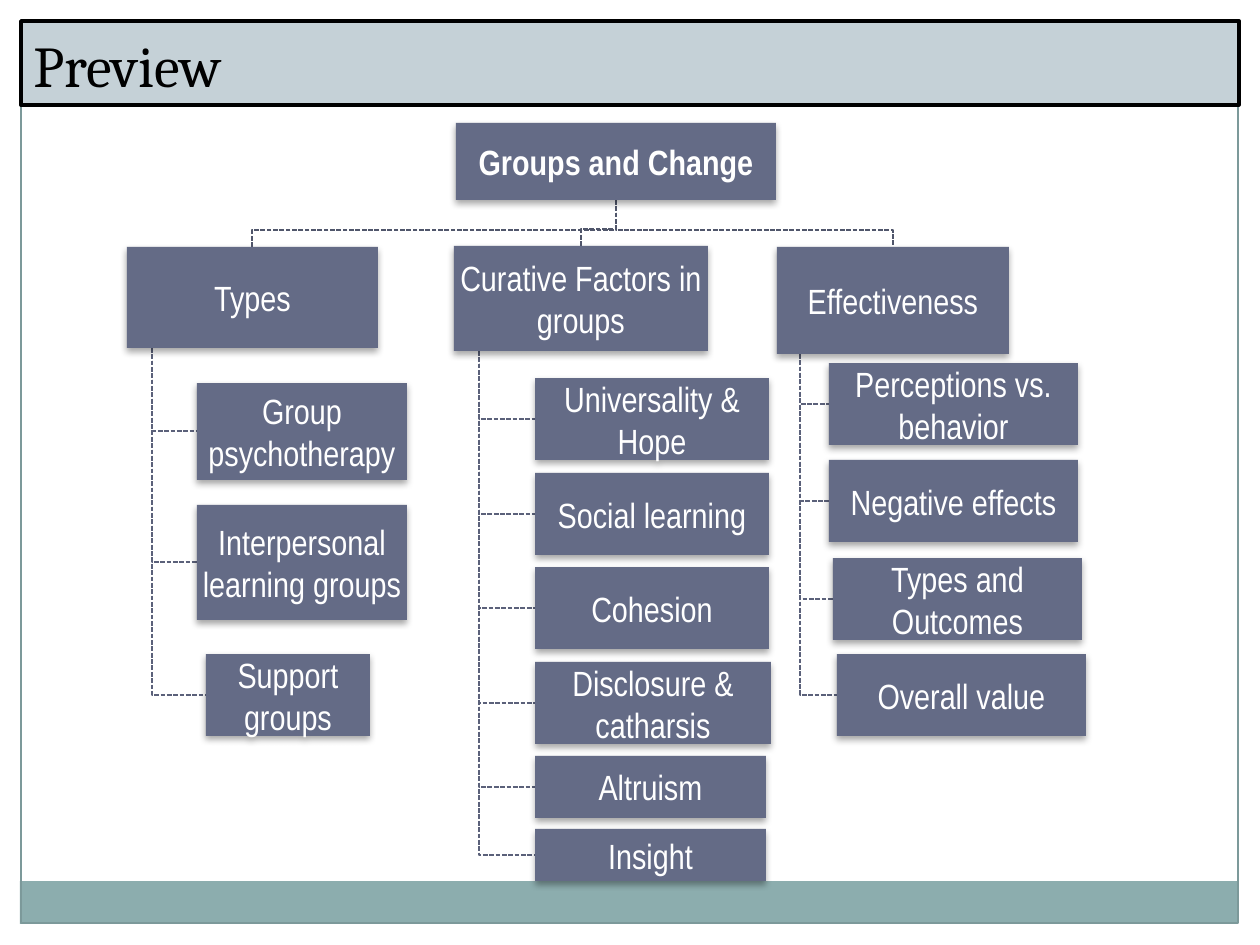
from dataclasses import dataclass
from itertools import pairwise

from lxml.etree import SubElement
from pptx import Presentation
from pptx.dml.color import RGBColor
from pptx.enum.dml import MSO_LINE_DASH_STYLE as Dash
from pptx.enum.shapes import MSO_AUTO_SHAPE_TYPE as Preset
from pptx.enum.text import MSO_VERTICAL_ANCHOR as Anchor, PP_PARAGRAPH_ALIGNMENT as Align
from pptx.oxml.ns import qn
from pptx.shapes.autoshape import Shape
from pptx.slide import Slide
from pptx.util import Emu, Pt

EMU_PER_PX = 914400 / 126
COLORS = {
    "box": "646B86",
    "branch": "50566B",
    "twig": "5B617A",
    "band": "8CADAE",
    "frame": "7C999A",
    "title": "C5D1D7",
    "black": "000000",
    "white": "FFFFFF",
}


@dataclass(frozen=True)
class Box:
    label: str
    left: int
    top: int
    width: int
    height: int = 82

    @property
    def center(self) -> int:
        return self.left + self.width // 2

    @property
    def middle(self) -> int:
        return self.top + self.height // 2

    @property
    def bottom(self) -> int:
        return self.top + self.height


@dataclass(frozen=True)
class Topic:
    head: Box
    items: tuple[Box, ...]


ROOT = Box("Groups and Change", 456, 123, 320, 77)
TOPICS = (
    Topic(Box("Types", 127, 247, 251, 101), (
        Box("Group psychotherapy", 197, 383, 210, 97),
        Box("Interpersonal learning groups", 197, 505, 210, 115),
        Box("Support groups", 206, 654, 164),
    )),
    Topic(Box("Curative Factors in groups", 454, 246, 254, 105), (
        Box("Universality & Hope", 535, 378, 234),
        Box("Social learning", 535, 473, 234),
        Box("Cohesion", 535, 567, 234),
        Box("Disclosure & catharsis", 535, 662, 236),
        Box("Altruism", 535, 756, 231, 62),
        Box("Insight", 535, 829, 231, 52),
    )),
    Topic(Box("Effectiveness", 777, 247, 232, 107), (
        Box("Perceptions vs. behavior", 829, 363, 249),
        Box("Negative effects", 829, 460, 249),
        Box("Types and Outcomes", 833, 558, 249),
        Box("Overall value", 837, 654, 249),
    )),
)
BAND = Box("", 20, 881, 1217, 43)
FRAME = Box("", 21, 21, 1217, 902)
TITLE = Box("Preview", 21, 21, 1218, 84)


def px(length: int) -> Emu:
    return Emu(round(length * EMU_PER_PX))


def color(name: str) -> RGBColor:
    return RGBColor.from_string(COLORS[name])


def write(shape: Shape, text: str, *, font: str, size: int, ink: str,
          bold: bool = False, align: Align = Align.LEFT,
          anchor: Anchor = Anchor.MIDDLE, inset: int | None = None) -> None:
    frame = shape.text_frame
    frame.word_wrap = True
    frame.vertical_anchor = anchor
    if inset is not None:
        frame.margin_left = frame.margin_right = px(inset)
        frame.margin_top = frame.margin_bottom = px(inset)
    paragraph = frame.paragraphs[0]
    paragraph.alignment = align
    run = paragraph.add_run()
    run.text = text
    run.font.name = font
    run.font.size = Pt(size)
    run.font.bold = bold
    run.font.color.rgb = color(ink)


def draw_rect(slide: Slide, box: Box, *, fill: str | None = None,
              line: str | None = None, weight: float = 0.75) -> Shape:
    rect = slide.shapes.add_shape(Preset.RECTANGLE, px(box.left), px(box.top),
                                  px(box.width), px(box.height))
    rect.shadow.inherit = False
    if fill:
        rect.fill.solid()
        rect.fill.fore_color.rgb = color(fill)
    else:
        rect.fill.background()
    if line:
        rect.line.color.rgb = color(line)
        rect.line.width = Pt(weight)
    else:
        rect.line.fill.background()
    return rect


def cast_shadow(shape: Shape) -> None:
    effects = shape._element.spPr.find(qn("a:effectLst"))
    shadow = SubElement(effects, qn("a:outerShdw"), blurRad=str(Pt(4)),
                        dist=str(Pt(2)), dir="5400000", rotWithShape="0")
    tint = SubElement(shadow, qn("a:srgbClr"), val=COLORS["black"])
    SubElement(tint, qn("a:alpha"), val="35000")


def draw_box(slide: Slide, box: Box, bold: bool = False) -> None:
    rect = draw_rect(slide, box, fill="box")
    cast_shadow(rect)
    write(rect, box.label, font="Arial Narrow", size=20, ink="white",
          bold=bold, align=Align.CENTER, inset=1)


def draw_path(slide: Slide, points: list[tuple[int, int]], ink: str) -> None:
    builder = slide.shapes.build_freeform(*points[0], scale=EMU_PER_PX)
    builder.add_line_segments([end for _, end in pairwise(points)], close=False)
    path = builder.convert_to_shape()
    path.shadow.inherit = False
    path.fill.background()
    path.line.color.rgb = color(ink)
    path.line.width = Pt(0.9)
    path.line.dash_style = Dash.SQUARE_DOT


def draw_links(slide: Slide, topic: Topic) -> None:
    head = topic.head
    trunk = head.left + head.width // 10
    for item in reversed(topic.items):
        draw_path(slide, [(trunk, head.bottom), (trunk, item.middle),
                          (item.left, item.middle)], "twig")
    bend = head.top - 17
    draw_path(slide, [(ROOT.center, ROOT.bottom), (ROOT.center, bend),
                      (head.center, bend), (head.center, head.top)], "branch")


def main() -> None:
    deck = Presentation()
    deck.slide_width, deck.slide_height = px(1260), px(945)
    slide = deck.slides.add_slide(deck.slide_layouts[6])

    draw_rect(slide, BAND, fill="band")
    draw_rect(slide, FRAME, line="frame")
    for topic in reversed(TOPICS):
        draw_links(slide, topic)
    draw_box(slide, ROOT, bold=True)
    for topic in TOPICS:
        for box in (topic.head, *topic.items):
            draw_box(slide, box)
    title = draw_rect(slide, TITLE, fill="title", line="black", weight=2)
    write(title, TITLE.label, font="Cambria", size=33, ink="black",
          anchor=Anchor.BOTTOM)

    deck.save("out.pptx")


if __name__ == "__main__":
    main()
